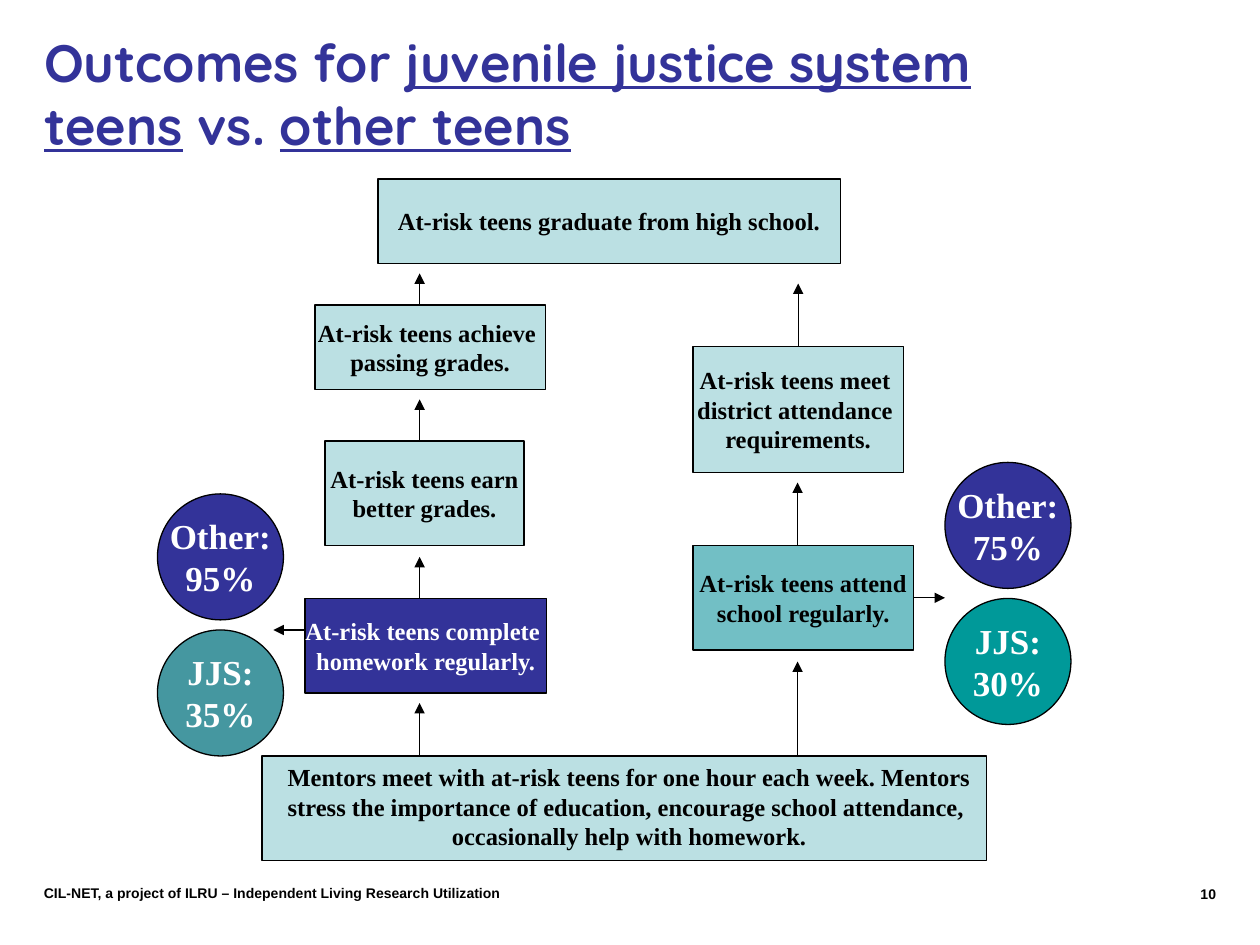
from lxml import etree
from pptx import Presentation
from pptx.dml.color import RGBColor
from pptx.enum import shapes, text
from pptx.oxml.ns import qn
from pptx.util import Inches, Pt

SERIF = "Times New Roman"
INK, WHITE, NAVY, PALE = "000000", "FFFFFF", "333399", "BBE0E3"

# Content: title runs as (text, underlined)
TITLE = [("Outcomes for ", False), ("juvenile justice system teens", True),
         (" vs. ", False), ("other teens", True)]
MENTORS = ["Mentors meet with at-risk teens for one hour each week. Mentors "
           "stress the importance of education, encourage school attendance, ",
           "occasionally help with homework."]
FOOTER = "CIL-NET, a project of ILRU – Independent Living Research Utilization"
PAGE = "10"

# Steps: key -> (left, top, width, height), fill, text colour, lines
STEPS = {
    "mentors": ((2.08, 6, 5.75, 0.83), PALE, INK, []),
    "homework": ((2.42, 4.75, 1.92, 0.75), NAVY, WHITE,
                 ["At-risk teens complete ", "homework regularly."]),
    "earn": ((2.58, 3.5, 1.58, 0.83), PALE, INK,
             ["At-risk teens earn", "better grades."]),
    "achieve": ((2.5, 2.42, 1.83, 0.67), PALE, INK,
                ["At-risk teens achieve ", "passing grades."]),
    "attend": ((5.5, 4.33, 1.75, 0.83), "72BFC5", INK,
               ["At-risk teens attend", "school regularly."]),
    "meet": ((5.5, 2.75, 1.67, 1), PALE, INK,
             ["At-risk teens meet ", "district attendance ", "requirements."]),
    "graduate": ((3, 1.42, 3.67, 0.67), PALE, INK,
                 ["At-risk teens graduate from high school."]),
}

# Result circles: left, top, fill, lines
RESULTS = [(1.25, 5, "4597A0", ["JJS:", "35%"]),
           (1.25, 3.92, NAVY, ["Other:", "95%"]),
           (7.5, 3.67, NAVY, ["Other:", "75%"]),
           (7.5, 4.75, "009999", ["JJS:", "30%"])]

# Upward arrows: x -> (step it leaves, y of the head)
UPWARD = {3.33: [("mentors", 5.58), ("homework", 4.42), ("earn", 3.17),
                 ("achieve", 2.17)],
          6.33: [("mentors", 5.25), ("attend", 3.83), ("meet", 2.25)]}


def color(value):
    return RGBColor.from_string(value)


def format_font(font, name, size, value):
    font.name, font.size, font.bold = name, Pt(size), True
    font.color.rgb = color(value)


def fill_text(frame, lines, name, size, value, align):
    frame.text = "\n".join(lines)
    for paragraph in frame.paragraphs:
        paragraph.alignment = align
        for run in paragraph.runs:
            format_font(run.font, name, size, value)


def add_node(kind, box, fill, lines, size, value):
    node = slide.shapes.add_shape(kind, *map(Inches, box))
    node.shadow.inherit = False
    node.fill.solid()
    node.fill.fore_color.rgb = color(fill)
    node.line.color.rgb = color(INK)
    node.line.width = Pt(0.75)
    if lines:
        node.text_frame.word_wrap = False
        node.text_frame.vertical_anchor = text.MSO_ANCHOR.MIDDLE
        fill_text(node.text_frame, lines, SERIF, size, value,
                  text.PP_ALIGN.CENTER)
    return node


def add_label(box, lines, name, size, align):
    frame = slide.shapes.add_textbox(*map(Inches, box)).text_frame
    frame.word_wrap = True
    fill_text(frame, lines, name, size, INK, align)


def add_arrow(x1, y1, x2, y2):
    arrow = slide.shapes.add_connector(
        shapes.MSO_CONNECTOR.STRAIGHT, *map(Inches, (x1, y1, x2, y2)))
    arrow.line.color.rgb = color(INK)
    arrow.line.width = Pt(0.75)
    etree.SubElement(arrow.line._get_or_add_ln(), qn("a:tailEnd"),
                     type="triangle")
    etree.SubElement(arrow._element.spPr, qn("a:effectLst"))
    return arrow


prs = Presentation()
prs.slide_width, prs.slide_height = Inches(10), Inches(7.5)
slide = prs.slides.add_slide(prs.slide_layouts[5])

# Title
title = slide.shapes.title
title.left, title.top, title.width, title.height = map(
    Inches, (0.25, 0.3, 8.42, 0.87))
title.text_frame.auto_size = text.MSO_AUTO_SIZE.NONE
title.text_frame.vertical_anchor = text.MSO_ANCHOR.MIDDLE
heading = title.text_frame.paragraphs[0]
heading.alignment = text.PP_ALIGN.LEFT
for words, underlined in TITLE:
    run = heading.add_run()
    run.text = words
    format_font(run.font, "Quicksand", 30, NAVY)
    run.font.underline = underlined

# Step boxes, with the mentors' text slightly wider than its box
steps = {key: add_node(shapes.MSO_SHAPE.RECTANGLE, box, fill, lines, 14, value)
         for key, (box, fill, value, lines) in STEPS.items()}
add_label((2.08, 6, 5.83, 0.81), MENTORS, SERIF, 14, text.PP_ALIGN.CENTER)

# Arrows from each step to the one above
for x, arrows in UPWARD.items():
    for key, head in arrows:
        arrow = add_arrow(x, STEPS[key][0][1], x, head)
        if key == "meet":
            arrow.begin_connect(steps[key], 0)
            arrow.end_x = arrow.begin_x

# Result circles and the arrows to them
for left, top, fill, lines in RESULTS:
    add_node(shapes.MSO_SHAPE.OVAL, (left, top, 1, 1), fill, lines, 20, WHITE)
add_arrow(2.42, 5, 2.17, 5)
to_attendance = add_arrow(7.25, 4.75, 7.5, 4.75)
to_attendance.begin_connect(steps["attend"], 3)
to_attendance.end_y = to_attendance.begin_y

# Footer
add_label((0.25, 6.97, 5, 0.23), [FOOTER], "Arial", 8, text.PP_ALIGN.LEFT)
add_label((9.08, 6.98, 0.67, 0.27), [PAGE], "Arial", 8, text.PP_ALIGN.RIGHT)

prs.save("out.pptx")
